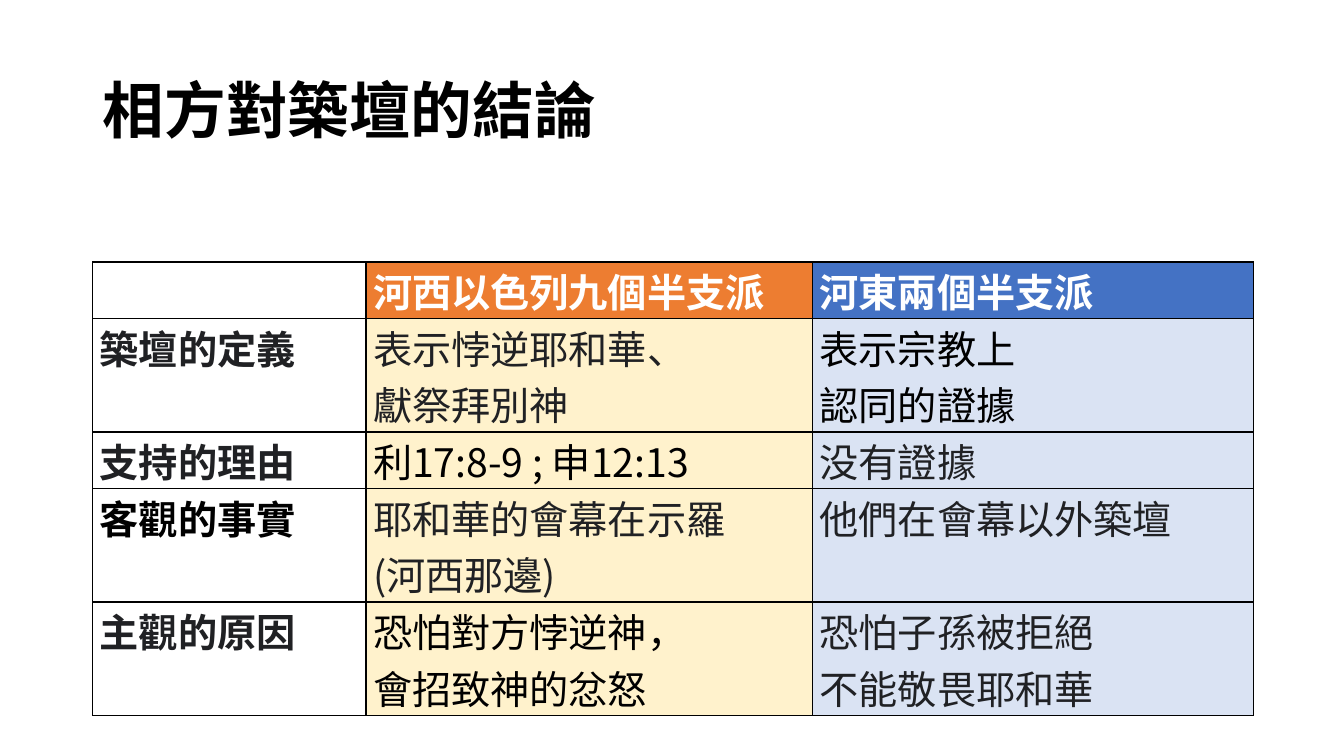
from lxml.etree import SubElement
from pptx import Presentation
from pptx.dml.color import RGBColor as Color
from pptx.enum.text import MSO_ANCHOR as Anchor, PP_ALIGN as Align
from pptx.oxml.ns import qn
from pptx.util import Inches, Pt

COLORS = {
    "black": "000000", "ink": "202124", "white": "FFFFFF",
    "orange": "ED7D31", "blue": "4472C4",
    "cream": "FFF2CC", "pale_blue": "DAE3F3",
}
HEADING_FONT = "Noto Sans CJK SC"
BODY_FONT = "Noto Sans CJK TC"

COLUMN_WIDTHS = (2.71, 4.43, 4.37)
ROW_HEIGHT = 0.45
HEADER_FILLS = (None, "orange", "blue")
BODY_FILLS = (None, "cream", "pale_blue")

# Each cell holds its text and text colour
ROWS = [
    [("", "white"), ("河西以色列九個半支派", "white"), ("河東兩個半支派", "white")],
    [("築壇的定義", "ink"), ("表示悖逆耶和華、\n獻祭拜別神", "ink"),
     ("表示宗教上\n認同的證據", "black")],
    [("支持的理由", "ink"), ("利17:8-9 ; 申12:13 ", "black"), ("没有證據", "ink")],
    [("客觀的事實", "black"), ("耶和華的會幕在示羅\n(河西那邊)", "ink"),
     ("他們在會幕以外築壇", "ink")],
    [("主觀的原因", "ink"), ("恐怕對方悖逆神，\n會招致神的忿怒", "black"),
     ("恐怕子孫被拒絕\n不能敬畏耶和華", "ink")],
]


class SlideBuilder:
    def __init__(self, deck):
        self.slide = deck.slides.add_slide(deck.slide_layouts[5])

    def format_text(self, frame, size, color, bold):
        name = HEADING_FONT if bold else BODY_FONT
        for para in frame.paragraphs:
            para.alignment = Align.LEFT
            for span in para.runs:
                font = span.font
                font.size, font.bold, font.name = Pt(size), bold, name
                font.color.rgb = Color.from_string(COLORS[color])
                # East Asian glyphs take their own typeface entry
                SubElement(font._element, qn("a:ea"), typeface=name)

    def title(self, text, left, top, width, height):
        box = self.slide.shapes.title
        box.left, box.top = Inches(left), Inches(top)
        box.width, box.height = Inches(width), Inches(height)
        frame = box.text_frame
        frame.text = text
        frame.word_wrap = True
        frame.vertical_anchor = Anchor.MIDDLE
        frame.paragraphs[0].line_spacing = 0.9
        self.format_text(frame, 44, "black", True)

    def table(self, rows, left, top):
        table = self.slide.shapes.add_table(
            len(rows), len(COLUMN_WIDTHS), Inches(left), Inches(top),
            Inches(sum(COLUMN_WIDTHS)), Inches(ROW_HEIGHT * len(rows))).table
        table.first_row = table.horz_banding = False
        for column, width in zip(table.columns, COLUMN_WIDTHS):
            column.width = Inches(width)
        for r, row in enumerate(rows):
            fills = BODY_FILLS if r else HEADER_FILLS
            for c, (text, color) in enumerate(row):
                self.cell(table.cell(r, c), text, color, fills[c], r == 0 or c == 0)

    def cell(self, cell, text, color, fill, bold):
        cell.margin_left = cell.margin_right = Inches(0.07)
        cell.margin_top = cell.margin_bottom = 0
        cell.text_frame.text = text
        self.format_text(cell.text_frame, 28, color, bold)
        self.borders(cell)
        if fill:
            cell.fill.solid()
            cell.fill.fore_color.rgb = Color.from_string(COLORS[fill])
        else:
            cell.fill.background()

    def borders(self, cell):
        properties = cell._tc.get_or_add_tcPr()
        for side in ("lnL", "lnR", "lnT", "lnB"):
            line = SubElement(properties, qn(f"a:{side}"), w=str(Pt(1)))
            solid = SubElement(line, qn("a:solidFill"))
            SubElement(solid, qn("a:srgbClr"), val=COLORS["black"])


def main():
    deck = Presentation()
    deck.slide_width, deck.slide_height = Inches(13.33), Inches(7.5)
    builder = SlideBuilder(deck)
    # Heading
    builder.title("相方對築壇的結論", 0.92, 0.4, 11.5, 1.45)
    # Comparison of both sides
    builder.table(ROWS, 0.92, 2.6)
    deck.save("out.pptx")


if __name__ == "__main__":
    main()
